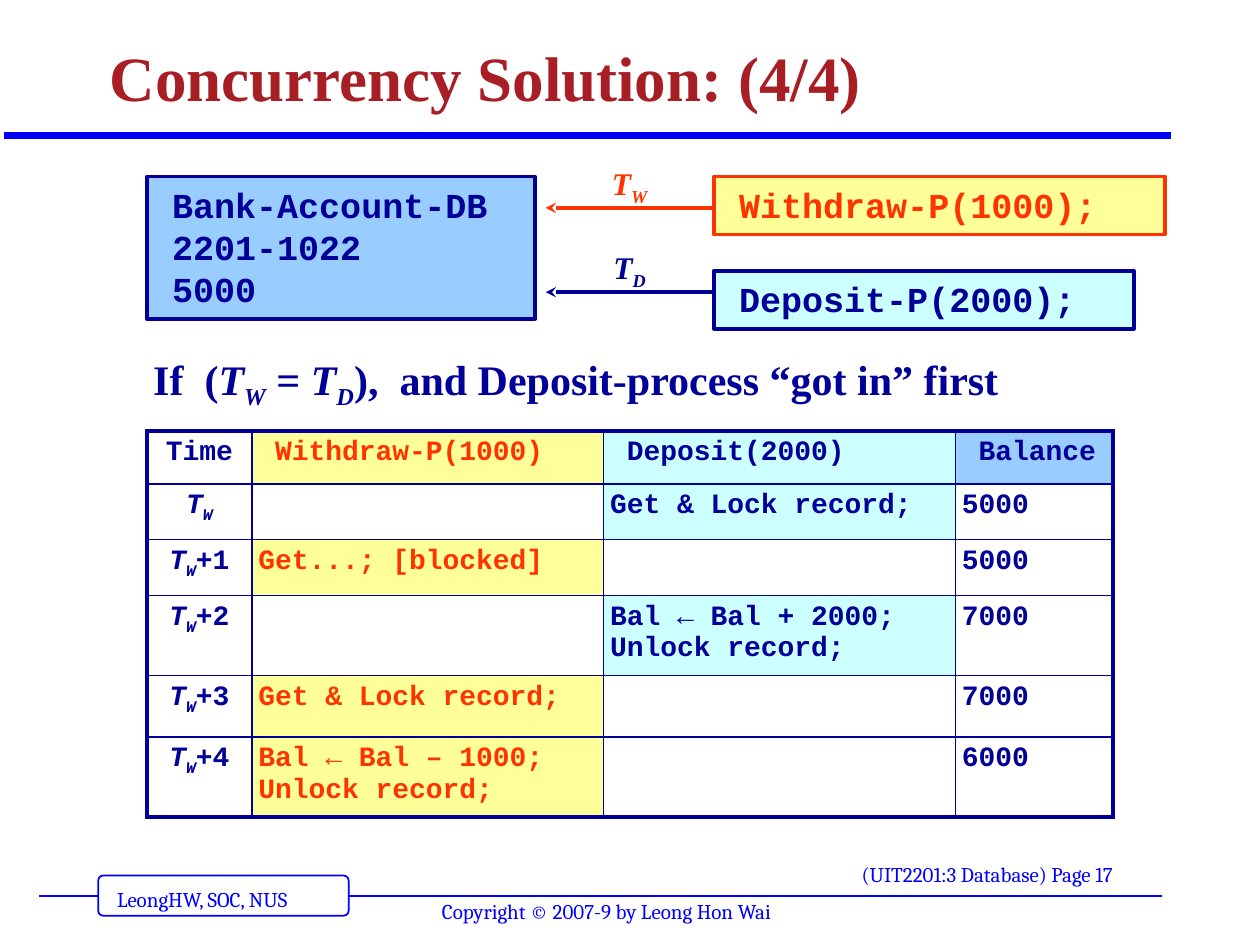
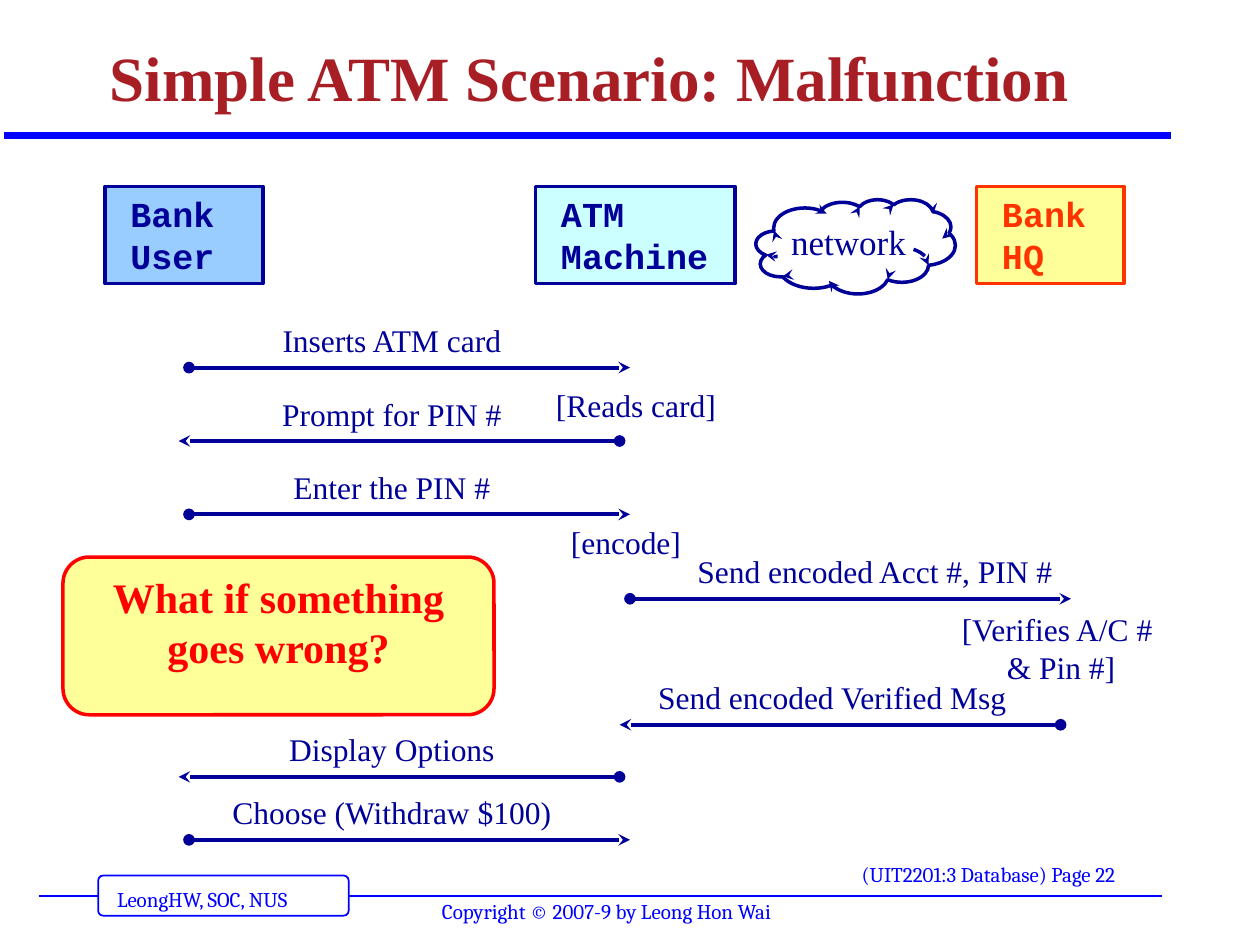
"""Build two database lecture slides: a locking timeline and an ATM message sequence."""
from lxml import etree
from pptx import Presentation
from pptx import util as u
from pptx.dml.color import RGBColor
from pptx.enum import shapes, text
from pptx.oxml import ns

BLUE = RGBColor(0x00, 0x00, 0xFF)
NAVY = RGBColor(0x00, 0x00, 0x99)
CRIMSON = RGBColor(0xA8, 0x1E, 0x25)
ORANGE = RGBColor(0xFF, 0x33, 0x00)
RED = RGBColor(0xFF, 0x00, 0x00)
SKY = RGBColor(0x99, 0xCC, 0xFF)
CYAN = RGBColor(0xCC, 0xFF, 0xFF)
YELLOW = RGBColor(0xFF, 0xFF, 0x99)
WHITE = RGBColor(0xFF, 0xFF, 0xFF)

LEFT, CENTER = text.PP_ALIGN.LEFT, text.PP_ALIGN.CENTER
RECTANGLE = shapes.MSO_SHAPE.RECTANGLE
ROUNDED = shapes.MSO_SHAPE.ROUNDED_RECTANGLE

TIGHT = {"margin_left": u.Cm(0.13), "margin_right": u.Cm(0.13),
         "margin_top": u.Cm(0.13), "margin_bottom": u.Cm(0.13)}
ROOMY = {**TIGHT, "margin_left": u.Cm(0.51), "margin_right": u.Cm(0.51)}
TOP = {"word_wrap": True, "vertical_anchor": text.MSO_ANCHOR.TOP}
GROW = {**TOP, "auto_size": text.MSO_AUTO_SIZE.SHAPE_TO_FIT_TEXT}
FOOTER_FRAME = {**GROW, "word_wrap": False}

TITLE_FONT = {"name": "Times New Roman", "size": u.Pt(36), "bold": True}
FOOTER_FONT = {"name": "Cambria", "size": u.Pt(12)}
CODE_FONT = {"name": "Courier New", "size": u.Pt(20), "bold": True}
CELL_FONT = {**CODE_FONT, "size": u.Pt(16)}
LABEL_FONT = {"name": "Times New Roman", "size": u.Pt(18), "bold": False}
TIME_FONT = {**LABEL_FONT, "bold": True}
STATEMENT_FONT = {**TIME_FONT, "size": u.Pt(24)}
NETWORK_FONT = {**LABEL_FONT, "size": u.Pt(20)}


def write_text(frame, content, font, color, align=LEFT, frame_format=None):
    """Write lines whose |-separated pieces cycle through plain, italic and subscript."""
    for name, value in (frame_format or {}).items():
        setattr(frame, name, value)
    for number, line in enumerate(content.split("\n")):
        paragraph = frame.add_paragraph() if number else frame.paragraphs[0]
        paragraph.alignment = align
        for position, piece in enumerate(line.split("|")):
            if not piece:
                continue
            run = paragraph.add_run()
            run.text = piece
            for name, value in {**font, "italic": position % 3 > 0}.items():
                setattr(run.font, name, value)
            run.font.color.rgb = color
            if position % 3 == 2:
                run.font._element.set("baseline", "-25000")


def add_line(slide, start, end, color, width, **ends):
    """Draw a straight line with optional headEnd and tailEnd marks."""
    connector = slide.shapes.add_connector(
        shapes.MSO_CONNECTOR.STRAIGHT, *[u.Cm(value) for value in start + end])
    connector.line.color.rgb = color
    connector.line.width = u.Pt(width)
    properties = connector.element.spPr
    for tag, kind in ends.items():
        etree.SubElement(properties.find(ns.qn("a:ln")), ns.qn(f"a:{tag}"), type=kind)
    etree.SubElement(properties, ns.qn("a:effectLst"))


presentation = Presentation()
presentation.slide_width, presentation.slide_height = u.Cm(25.4), u.Cm(19.05)

slides = []
for heading, page in (("Concurrency Solution: (4/4)", 17),
                      ("Simple ATM Scenario: Malfunction", 22)):
    slide = presentation.slides.add_slide(presentation.slide_layouts[5])
    slides.append(slide)
    title = slide.shapes.title
    title.left, title.top, title.width, title.height = [
        u.Cm(value) for value in (1.96, 0.2, 21.59, 2.24)]
    write_text(title.text_frame, heading, TITLE_FONT, CRIMSON, LEFT,
               {"vertical_anchor": text.MSO_ANCHOR.BOTTOM, "word_wrap": True,
                "auto_size": text.MSO_AUTO_SIZE.NONE})
    title.text_frame.paragraphs[0].line_spacing = 0.9
    add_line(slide, (0.79, 18.06), (23.42, 18.06), BLUE, 1)
    tab = slide.shapes.add_shape(
        ROUNDED, u.Cm(1.98), u.Cm(17.65), u.Cm(5.05), u.Cm(0.81))
    tab.adjustments[0] = 0.125
    tab.shadow.inherit = False
    tab.fill.solid()
    tab.fill.fore_color.rgb = WHITE
    tab.line.color.rgb = BLUE
    tab.line.width = u.Pt(1)
    add_line(slide, (0.08, 2.74), (23.6, 2.74), BLUE, 4)
    for left, top, width, content in (
            (2.11, 17.75, 4.62, "LeongHW, SOC, NUS"),
            (17.12, 17.25, 6.15, f"(UIT2201:3 Database) Page {page}"),
            (8.66, 17.98, 7.8, "Copyright © 2007-9 by Leong Hon Wai")):
        footer = slide.shapes.add_textbox(u.Cm(left), u.Cm(top), u.Cm(width), u.Cm(0.76))
        write_text(footer.text_frame, content, FOOTER_FONT, BLUE, LEFT, FOOTER_FRAME)

locking, malfunction = slides

CODE = (RECTANGLE, CODE_FONT, LEFT, {**ROOMY, **GROW})
CLOUD = (shapes.MSO_SHAPE.CLOUD, NETWORK_FONT, CENTER, {**TIGHT, **TOP})
CALLOUT = (ROUNDED, STATEMENT_FONT, CENTER, {**TIGHT, **TOP})
for slide, style, place, fill, color, content in (
        (locking, CODE, (2.96, 3.56, 7.83, 2.87), SKY, NAVY,
         "Bank-Account-DB\n2201-1022\n5000"),
        (locking, CODE, (14.39, 3.56, 9.1, 1.17), YELLOW, ORANGE, "Withdraw-P(1000);"),
        (locking, CODE, (14.39, 5.46, 8.47, 1.17), CYAN, NAVY, "Deposit-P(2000);"),
        (malfunction, CODE, (2.12, 3.76, 3.18, 1.96), SKY, NAVY, "Bank\nUser"),
        (malfunction, CODE, (10.8, 3.76, 4.02, 1.96), CYAN, NAVY, "ATM\nMachine"),
        (malfunction, CODE, (19.69, 3.76, 2.97, 1.96), YELLOW, ORANGE, "Bank\nHQ"),
        (malfunction, CLOUD, (15.24, 4.02, 4.02, 1.9), None, NAVY, "network"),
        (malfunction, CALLOUT, (1.27, 11.23, 8.69, 3.18), YELLOW, RED,
         "What if something goes wrong?")):
    kind, font, align, frame_format = style
    shape = slide.shapes.add_shape(kind, *[u.Cm(value) for value in place])
    shape.shadow.inherit = False
    if fill is None:
        shape.fill.background()
    else:
        shape.fill.solid()
        shape.fill.fore_color.rgb = fill
    shape.line.color.rgb = color
    shape.line.width = u.Pt(2)
    if style is CLOUD:
        etree.SubElement(shape.element.spPr.find(ns.qn("a:ln")),
                         ns.qn("a:tailEnd"), type="stealth")
    write_text(shape.text_frame, content, font, color, align, frame_format)

for y, color, content in ((4.19, ORANGE, "|T|W"), (5.89, NAVY, "|T|D")):
    add_line(locking, (14.39, y), (11, y), color, 2, tailEnd="stealth")
    label = locking.shapes.add_textbox(u.Cm(11.85), u.Cm(y - 1.01), u.Cm(1.69), u.Cm(1.02))
    write_text(label.text_frame, content, TIME_FONT, color, CENTER, {**TIGHT, **GROW})

statement = locking.shapes.add_textbox(u.Cm(2.96), u.Cm(6.99), u.Cm(19.47), u.Cm(1.27))
write_text(statement.text_frame,
           "If  (|T|W| = |T|D|),  and Deposit-process “got in” first",
           STATEMENT_FONT, NAVY, LEFT, {**TIGHT, **GROW})

timeline = (
    ("Time", " Withdraw-P(1000)", " Deposit(2000)", " Balance"),
    ("|T|W", "", "Get & Lock record;", "5000"),
    ("|T|W|+1", "Get...; [blocked]", "", "5000"),
    ("|T|W|+2", "", "Bal ← Bal + 2000;\nUnlock record;", "7000"),
    ("|T|W|+3", "Get & Lock record;", "", "7000"),
    ("|T|W|+4", "Bal ← Bal – 1000;\nUnlock record;", "", "6000"),
)
row_heights = (1.07, 1.12, 1.12, 1.6, 1.24, 1.6)
column_widths = (2.12, 7.09, 7.09, 3.18)
column_fills = (None, YELLOW, CYAN, SKY)
last_row, last_column = len(row_heights) - 1, len(column_widths) - 1
table = locking.shapes.add_table(
    len(row_heights), len(column_widths), u.Cm(2.96), u.Cm(8.69),
    u.Cm(sum(column_widths)), u.Cm(sum(row_heights))).table
table.first_row = table.horz_banding = False
for column, width in zip(table.columns, column_widths):
    column.width = u.Cm(width)
for row_index, (row, height, contents) in enumerate(zip(table.rows, row_heights, timeline)):
    row.height = u.Cm(height)
    for column_index, (cell, content) in enumerate(zip(row.cells, contents)):
        for name, value in TIGHT.items():
            setattr(cell, name, value)
        outer_edges = {"lnL": column_index == 0, "lnR": column_index == last_column,
                       "lnT": row_index == 0, "lnB": row_index == last_row}
        for tag, outer in outer_edges.items():
            border = etree.SubElement(cell._tc.get_or_add_tcPr(), ns.qn(f"a:{tag}"),
                                      w=str(u.Pt(2.25 if outer else 1)))
            border_fill = etree.SubElement(border, ns.qn("a:solidFill"))
            etree.SubElement(border_fill, ns.qn("a:srgbClr"), val=str(NAVY))
        fill = column_fills[column_index]
        if fill and content and (row_index == 0 or column_index < last_column):
            cell.fill.solid()
            cell.fill.fore_color.rgb = fill
        else:
            cell.fill.background()
        write_text(cell.text_frame, content, CELL_FONT,
                   ORANGE if column_index == 1 else NAVY,
                   CENTER if column_index == 0 else LEFT)

USER_TO_ATM, ATM_TO_USER = (3.81, 12.7), (12.49, 3.6)
ATM_TO_BANK, BANK_TO_ATM = (12.7, 21.59), (21.38, 12.49)
label_width = 9
for (start, end), y, label_center, content in (
        (USER_TO_ATM, 7.41, 7.9, "Inserts ATM card"),
        (ATM_TO_USER, 8.89, 7.9, "Prompt for PIN #"),
        (USER_TO_ATM, 10.37, 7.9, "Enter the PIN #"),
        (ATM_TO_BANK, 12.07, 17.64, "Send encoded Acct #, PIN #"),
        (BANK_TO_ATM, 14.61, 16.78, "Send encoded Verified Msg"),
        (ATM_TO_USER, 15.66, 7.9, "Display Options"),
        (USER_TO_ATM, 16.93, 7.9, "Choose (Withdraw $100)")):
    add_line(malfunction, (start, y), (end, y), NAVY, 2.25, headEnd="oval", tailEnd="stealth")
    label = malfunction.shapes.add_textbox(
        u.Cm(label_center - label_width / 2), u.Cm(y - 1.06), u.Cm(label_width), u.Cm(1.02))
    write_text(label.text_frame, content, LABEL_FONT, NAVY, CENTER, GROW)

for left, top, height, content in ((18.85, 12.17, 1.8, "[Verifies A/C # \n& Pin #]"),
                                   (10.36, 7.65, 1.02, "[Reads card] "),
                                   (10.16, 10.41, 1.02, "[encode] ")):
    note = malfunction.shapes.add_textbox(u.Cm(left), u.Cm(top), u.Cm(5.08), u.Cm(height))
    write_text(note.text_frame, content, LABEL_FONT, NAVY, CENTER, GROW)

presentation.save("out.pptx")
